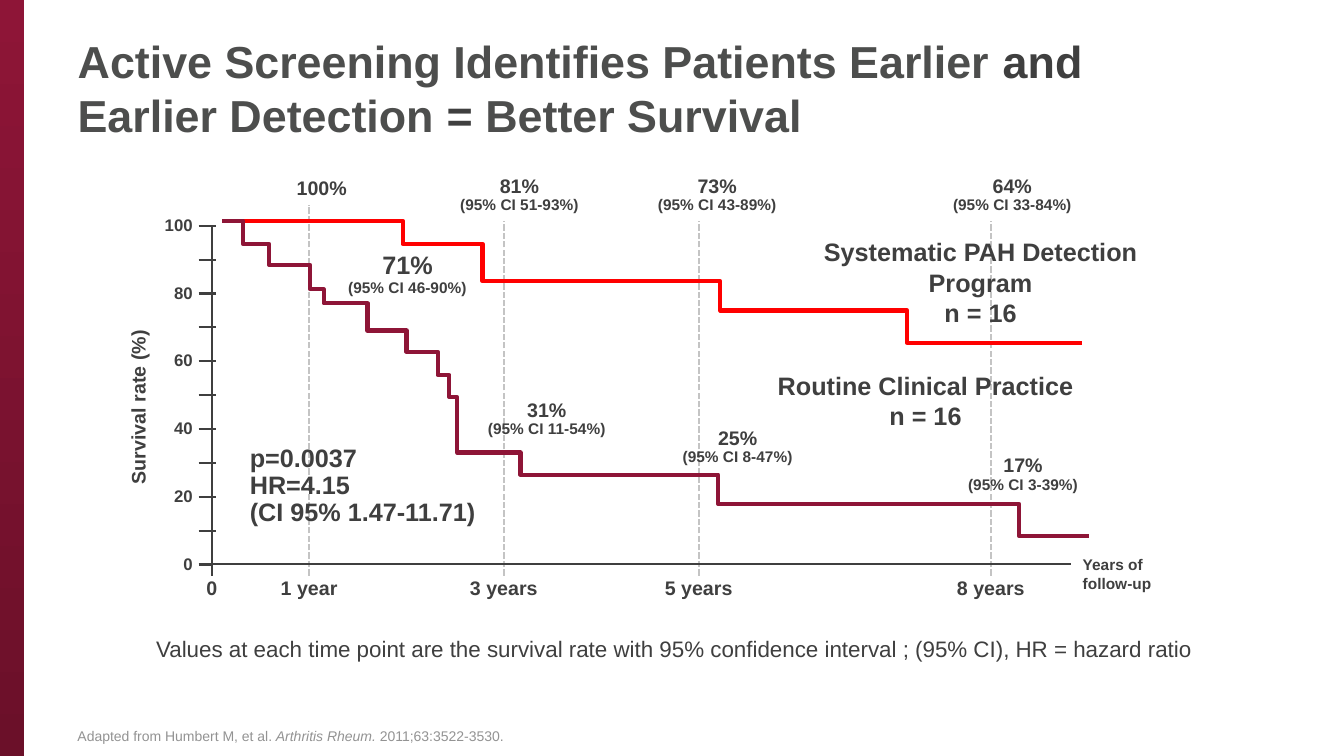
from copy import deepcopy

from pptx import Presentation
from pptx import util as u
from pptx.dml.color import RGBColor
from pptx.enum import dml, shapes, text
from pptx.oxml.ns import qn

INK, GREY, MUTED, GUIDE = "3F3F3F", "4D4E4D", "939393", "C4C4C4"
WINE, DARK_WINE, RED = "8E1537", "6B1029", "FF0000"
LEFT, CENTER, RIGHT = text.PP_ALIGN.LEFT, text.PP_ALIGN.CENTER, text.PP_ALIGN.RIGHT
YEARS = 8.82

DETECTION = [(1.96, 101.5), (2.78, 94.64), (5.22, 83.63), (7.14, 75), (8.94, 65.48)]
ROUTINE = [(0.32, 101.5), (0.59, 94.64), (1.01, 88.39), (1.15, 81.25), (1.6, 77.08),
           (2, 69.05), (2.32, 62.8), (2.44, 55.95), (2.52, 49.4), (3.17, 33.04),
           (5.2, 26.49), (8.29, 17.86), (9.01, 8.33)]
ESTIMATES = [("81%", "51-93%", 3.16, 116.07, 14), ("73%", "43-89%", 5.19, 116.07, 14),
             ("64%", "33-84%", 8.22, 116.07, 14), ("71%", "46-90%", 2.01, 93.45, 18),
             ("31%", "11-54%", 3.44, 50, 14), ("25%", "8-47%", 5.4, 41.67, 14),
             ("17%", "3-39%", 8.33, 33.6, 14)]
GUIDES = {1: 106.25, 3: 101.5, 5: 101.5, 8: 101.5}


def rgb(value):
    """Turn a hex string into a colour."""
    return RGBColor.from_string(value)


def write(tf, paragraphs, align=LEFT, spacing=None, **base):
    """Fill a text frame with paragraphs, each a list of (text, format) runs."""
    for i, runs in enumerate(paragraphs):
        p = tf.paragraphs[0] if i == 0 else tf.add_paragraph()
        p.alignment = align
        if spacing:
            p.line_spacing = spacing
        for words, own in runs:
            for j, line in enumerate(words.split("\n")):
                if j:
                    p.add_line_break()
                    p._p[-1].append(deepcopy(r._r.rPr))
                if not line:
                    continue
                r = p.add_run()
                r.text = line
                fmt = {"name": "Arial", "size": 14, "bold": True, "color": INK, **base, **own}
                r.font.color.rgb = rgb(fmt.pop("color"))
                fmt["size"] = u.Pt(fmt["size"])
                for key, value in fmt.items():
                    setattr(r.font, key, value)


def label(s, box, paragraphs, wrap=False, anchor=text.MSO_ANCHOR.TOP, **fmt):
    """Add a text box at the given left, top, width and height in inches."""
    sp = s.shapes.add_textbox(*map(u.Inches, box))
    sp.text_frame.word_wrap = wrap
    sp.text_frame.vertical_anchor = anchor
    write(sp.text_frame, paragraphs, **fmt)
    return sp


def rule(s, x1, y1, x2, y2, color=INK, dash=None):
    """Draw a thin straight line."""
    c = s.shapes.add_connector(shapes.MSO_CONNECTOR.STRAIGHT, *map(u.Inches, (x1, y1, x2, y2)))
    c.line.color.rgb = rgb(color)
    c.line.width = u.Pt(1.5)
    if dash:
        c.line.dash_style = dash
    c._element.spPr.append(c._element.spPr.makeelement(qn("a:effectLst"), {}))


def outline(s, points, color, width):
    """Draw an open, unfilled line through points in inches."""
    points = [(u.Inches(x), u.Inches(y)) for x, y in points]
    fb = s.shapes.build_freeform(*points[0])
    fb.add_line_segments(points[1:], close=False)
    sp = fb.convert_to_shape()
    sp.fill.background()
    sp.line.color.rgb = rgb(color)
    sp.line.width = u.Pt(width)
    sp.shadow.inherit = False


def side_bar(s, width, height):
    """Place the graded bar on the left edge."""
    sp = s.shapes.add_shape(shapes.MSO_SHAPE.RECTANGLE, 0, 0, u.Inches(width), u.Inches(height))
    sp.fill.gradient()
    sp.fill.gradient_angle = 270
    for stop, color in zip(sp.fill.gradient_stops, (WINE, DARK_WINE)):
        stop.color.rgb = rgb(color)
    sp.line.fill.background()
    sp.shadow.inherit = False


def heading(s, box):
    """Move the title placeholder into its box and write it."""
    sp = s.shapes.title
    for key, value in zip(("left", "top", "width", "height"), box):
        setattr(sp, key, u.Inches(value))
    sp.text_frame.word_wrap = True
    sp.text_frame.vertical_anchor = text.MSO_ANCHOR.MIDDLE
    write(sp.text_frame, [[("Active Screening Identifies Patients Earlier ", {}),
                           ("and\n", {"color": INK}), ("Earlier Detection ", {}),
                           ("= ", {"color": INK}), ("Better Survival", {})]],
          size=32, color=GREY)


def survival_plot(s, left, top, width, height):
    """Draw axes, curves and labels, placed by year and survival rate."""
    def at(year, rate):
        return left + width * year / YEARS, top + height * (1 - rate / 100)

    base = top + height
    for year, rate in GUIDES.items():
        x, y = at(year, rate)
        rule(s, x, base + 0.11, x, y, GUIDE, dml.MSO_LINE.SQUARE_DOT)
    outline(s, [at(0, 100), at(0, 0), at(YEARS, 0)], INK, 1.5)
    rule(s, left, base + 0.11, left, base)
    for rate in range(0, 101, 10):
        y = at(0, rate)[1]
        rule(s, left - 0.13, y, left + (0.04 if rate else 0), y)
        if rate % 20 == 0:
            label(s, (left - 0.64, y - 0.16, 0.55, 0.32), [[(str(rate), {})]],
                  align=RIGHT, size=12)
    for year in (0, *GUIDES):
        name = f"{year} year{'s' if year > 1 else ''}" if year else "0"
        label(s, (at(year, 0)[0] - 0.5, base + 0.06, 1, 0.36), [[(name, {})]], align=CENTER)
    axis = label(s, (left - 1.63, top + 1.61, 1.84, 0.38), [[("Survival rate (%)", {})]],
                 align=CENTER)
    axis.rotation = 270
    label(s, (left + width + 0.02, base - 0.14, 1.25, 0.5), [[("Years of follow-up", {})]],
          wrap=True, size=11)

    for steps, color in ((DETECTION, RED), (ROUTINE, WINE)):
        points, start = [], 0.11
        for end, rate in steps:
            points += [at(start, rate), at(end, rate)]
            start = end
        outline(s, points, color, 3)

    x, y = at(1.13, 116.07)
    label(s, (x - 0.4, y, 0.8, 0.36), [[("100%", {})]], align=CENTER)
    for rate, ci, year, level, size in ESTIMATES:
        x, y = at(year, level)
        label(s, (x - 0.79, y, 1.58, 0.51),
              [[(rate + "\n", {"size": size}), (f"(95% CI {ci})", {"size": 11})]],
              align=CENTER, spacing=0.9)
    label(s, (left + 0.28, top + 2.13, 2.8, 0.98),
          [[("p=0.0037\nHR=4.15\n(CI 95% 1.47-11.71)", {})]], spacing=0.9, size=18)
    groups = [("Systematic PAH Detection Program", (5.62, 0.06, 4.01, 1.07), True),
              ("Routine Clinical Practice", (5.28, 1.38, 3.6, 0.75), False)]
    for name, (dx, dy, w, h), wrap in groups:
        label(s, (left + dx, top + dy, w, h), [[(name, {})], [("n = 16", {})]],
              wrap=wrap, align=CENTER, size=18)


def notes_below(s, left, width):
    """Write the explanation and the citation under the plot."""
    label(s, (left + 0.78, 6.25, 10.55, 0.64),
          [[("Values at each time point are the survival rate with 95% confidence interval ; "
             "(95% CI), HR = hazard ratio", {})]], wrap=True, size=16, bold=False)
    label(s, (left, 6.95, width, 0.48),
          [[("Adapted from Humbert M, et al. ", {}), ("Arthritis Rheum. ", {"italic": True}),
            ("2011;63:3522-3530.", {})]],
          wrap=True, anchor=text.MSO_ANCHOR.BOTTOM, size=10, bold=False, color=MUTED)


def main():
    """Build the slide and save it."""
    prs = Presentation()
    prs.slide_width, prs.slide_height = u.Inches(13.33), u.Inches(7.5)
    s = prs.slides.add_slide(prs.slide_layouts[5])
    side_bar(s, 0.24, 7.5)
    heading(s, (0.67, 0.22, 11.75, 1.3))
    survival_plot(s, 2.1, 2.24, 8.52, 3.36)
    notes_below(s, 0.67, 11.75)
    prs.save("out.pptx")


if __name__ == "__main__":
    main()
